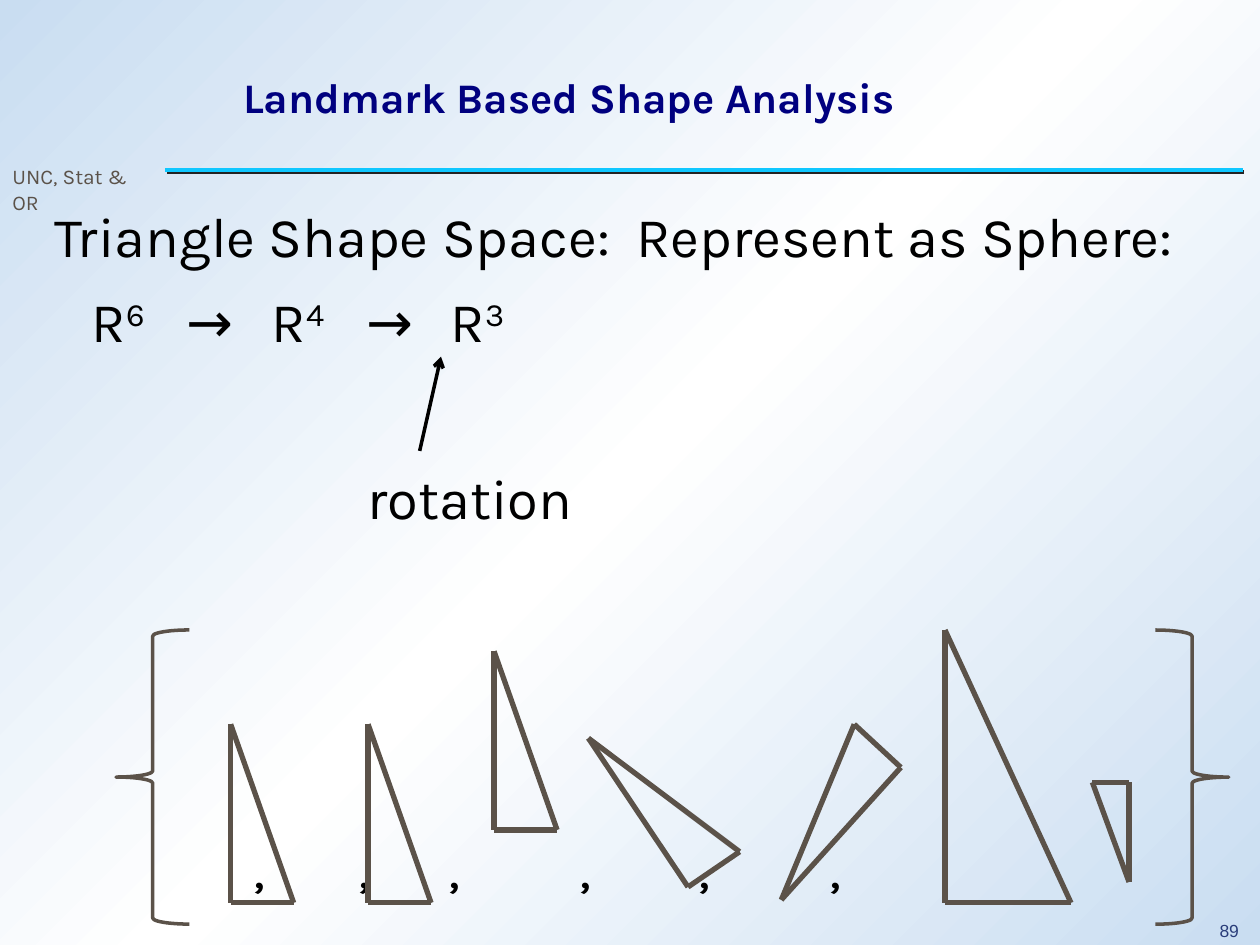
from lxml.etree import SubElement
from copy import deepcopy
from pptx import Presentation
from pptx.dml.color import RGBColor
from pptx.enum.shapes import MSO_CONNECTOR, MSO_SHAPE
from pptx.enum.text import MSO_ANCHOR as Anchor, PP_ALIGN as Align
from pptx.oxml.ns import qn
from pptx.util import Cm, Pt

NAVY = RGBColor(0x00, 0x00, 0x7F)
BLACK = RGBColor(0x00, 0x00, 0x00)
TAUPE = RGBColor(0x5B, 0x52, 0x49)
CYAN = RGBColor(0x0F, 0xC7, 0xFF)
INDIGO = RGBColor(0x2A, 0x3D, 0x7A)
PALE_BLUE = RGBColor(0xC9, 0xDD, 0xF1)
WHITE = RGBColor(0xFF, 0xFF, 0xFF)

# Content: each paragraph is a list of (text, superscript) spans; lengths in cm
TITLE = "Landmark Based Shape Analysis"
BODY = [
    [("Triangle Shape Space:  Represent as Sphere:", False)],
    [("\tR", False), ("6", True), ("\t→\tR", False), ("4", True),
     ("\t→\tR", False), ("3", True)],
]
FORMULA_TABS = [0.76, 2.67, 4.39, 6.3, 8.0]
COMMA_TABS = [4.14, 6.25, 8.08, 10.72, 13.11, 15.75]

SLIM = [(0, 0), (0, 3.6), (1.27, 3.6)]
SLIM_TOPS = [(4.65, 14.6), (7.42, 14.6), (9.96, 13.13)]
OTHER_TRIANGLES = [
    [(11.86, 14.88), (13.87, 17.88), (14.91, 17.17)],
    [(15.75, 18.14), (18.16, 15.47), (17.22, 14.6)],
    [(19.05, 12.7), (19.05, 18.2), (21.59, 18.2)],
    [(22.76, 17.78), (22.76, 15.77), (22.02, 15.77)],
]
BRACES = [(2.34, 0), (23.29, 180)]


def add_tabs(para, stops, align="l"):
    tab_list = SubElement(para._p.get_or_add_pPr(), qn("a:tabLst"))
    for stop in stops:
        SubElement(tab_list, qn("a:tab"), pos=str(Cm(stop)), algn=align)


def add_text(page, place, paragraphs, size=32, color=BLACK, font="Karla",
             bold=False, align=Align.LEFT, anchor=Anchor.TOP,
             line_spacing=None, space_before=None, tabs=(), tab_align="l"):
    """Add a text box; paragraphs is a string or a list of span lists."""
    if isinstance(paragraphs, str):
        paragraphs = [[(paragraphs, False)]]
    box = page.shapes.add_textbox(*map(Cm, place))
    frame = box.text_frame
    frame.word_wrap = True
    frame.vertical_anchor = anchor
    for number, spans in enumerate(paragraphs):
        para = frame.add_paragraph() if number else frame.paragraphs[0]
        para.alignment = align
        para.line_spacing = line_spacing
        para.space_before = space_before
        if tabs and spans[0][0].startswith("\t"):
            add_tabs(para, tabs, tab_align)
        for text, superscript in spans:
            span = para.add_run()
            span.text = text
            span.font.size = Pt(size)
            span.font.name = font
            span.font.bold = bold
            span.font.color.rgb = color
            if superscript:
                span.font._element.set("baseline", "30000")
    return box


def add_line(parent, start, end, color, width):
    """Add a straight line and return it with its empty effect list."""
    line = parent.shapes.add_connector(
        MSO_CONNECTOR.STRAIGHT, *map(Cm, (*start, *end)))
    line.line.color.rgb = color
    line.line.width = Pt(width)
    effects = SubElement(line._element.spPr, qn("a:effectLst"))
    return line, effects


def add_background(page):
    fill = page.background.fill
    fill.gradient()
    fill.gradient_angle = 315
    first, last = fill.gradient_stops
    first.color.rgb = last.color.rgb = PALE_BLUE
    first.position, last.position = 0, 1
    first._gs.addnext(deepcopy(first._gs))
    middle = fill.gradient_stops[1]
    middle.color.rgb = WHITE
    middle.position = 0.5


def add_header(page):
    _, effects = add_line(page, (3.33, 3.43), (25.05, 3.43), CYAN, 2.25)
    shadow = SubElement(effects, qn("a:outerShdw"), dist=str(Pt(1.4)),
                        dir="2700000", algn="ctr", rotWithShape="0")
    SubElement(shadow, qn("a:srgbClr"), val="232323")
    add_text(page, (24.31, 18.42, 0.94, 0.63), "89", size=10, color=INDIGO,
             font="Arial", align=Align.CENTER).text_frame.margin_left = 0
    page.shapes[-1].text_frame.margin_right = 0
    add_text(page, (0, 3.18, 3.43, 0.76), "UNC, Stat & OR", size=12, color=TAUPE)
    add_text(page, (4.65, 1.27, 19.86, 1.37), TITLE, size=24, color=NAVY,
             bold=True, anchor=Anchor.MIDDLE)


def add_triangles(page):
    slim_copies = [[(left + x, top + y) for x, y in SLIM]
                   for left, top in SLIM_TOPS]
    for corners in slim_copies + OTHER_TRIANGLES:
        group = page.shapes.add_group_shape()
        for start, end in zip(corners, corners[1:] + corners[:1]):
            add_line(group, start, end, TAUPE, 3)


def add_braces(page):
    for left, rotation in BRACES:
        brace = page.shapes.add_shape(
            MSO_SHAPE.LEFT_BRACE, *map(Cm, (left, 12.7, 1.48, 5.93)))
        brace.rotation = rotation
        brace.shadow.inherit = False
        brace.fill.background()
        brace.line.color.rgb = TAUPE
        brace.line.width = Pt(2)


def main():
    deck = Presentation()
    deck.slide_width, deck.slide_height = Cm(25.4), Cm(19.05)
    page = deck.slides.add_slide(deck.slide_layouts[6])
    add_background(page)
    add_header(page)

    # Statement, formula and its label
    add_text(page, (0.84, 3.81, 23.39, 3.7), BODY, line_spacing=1.1,
             space_before=Pt(6.4), tabs=FORMULA_TABS)
    add_text(page, (7.16, 9.22, 5, 1.6), "rotation")

    # Set of equivalent triangles
    add_text(page, (0.84, 16.66, 23.39, 1.6), "\t," * len(COMMA_TABS),
             tabs=COMMA_TABS, tab_align="ctr")
    add_triangles(page)
    add_braces(page)

    # Arrow from the label to the formula
    arrow, _ = add_line(page, (8.46, 9.09), (8.89, 7.19), BLACK, 2)
    SubElement(arrow.line._get_or_add_ln(), qn("a:tailEnd"), type="arrow")
    deck.save("out.pptx")


if __name__ == "__main__":
    main()
